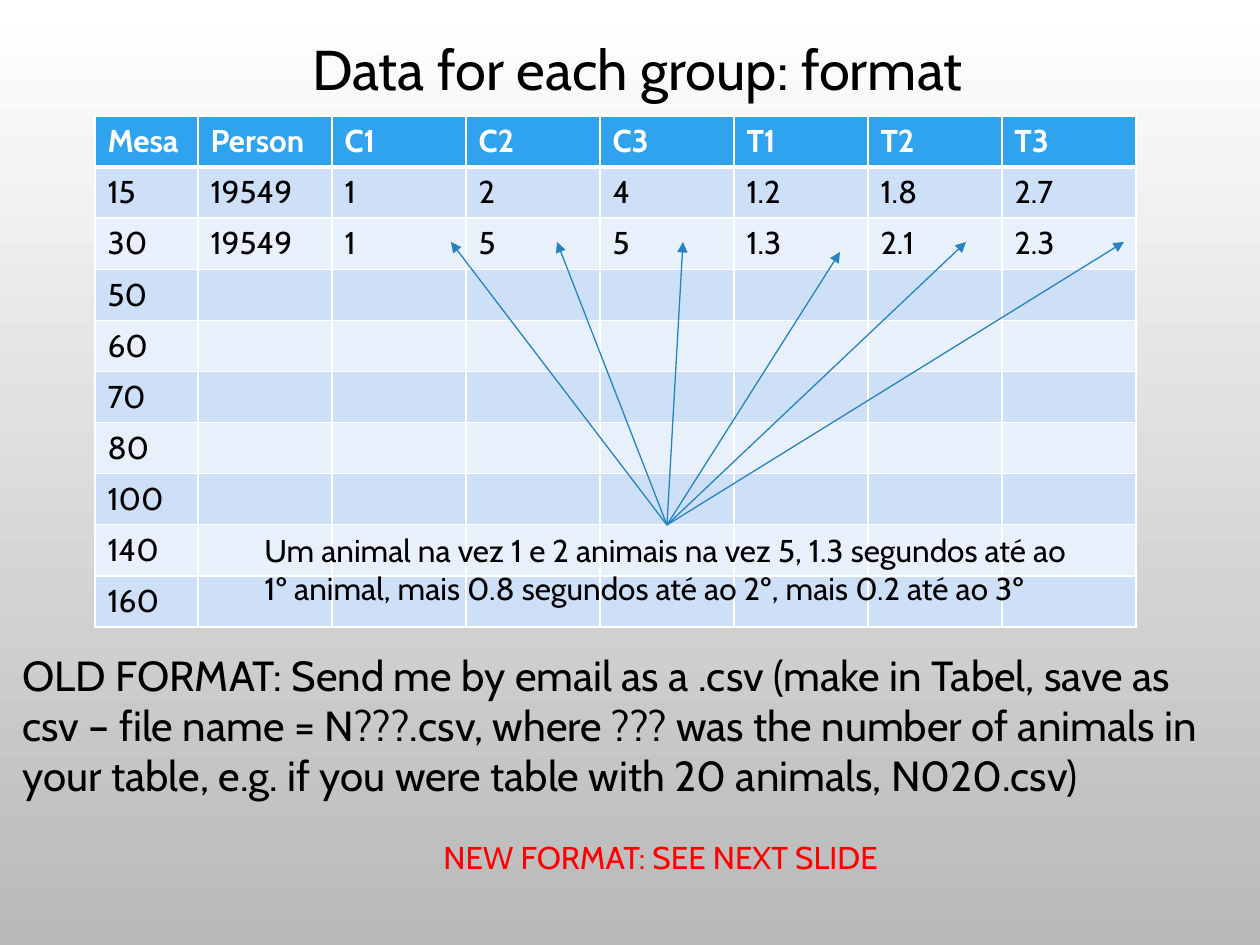
from lxml import etree
from pptx import Presentation
from pptx.dml.color import RGBColor
from pptx.enum.shapes import MSO_CONNECTOR
from pptx.oxml.ns import qn
from pptx.util import Emu, Pt

STRAIGHT = MSO_CONNECTOR.STRAIGHT
EMU_PER_INCH = 914400
PX_PER_INCH = 126
FONT = "Cabin"
BLACK, WHITE, RED = "000000", "FFFFFF", "FF0000"
HEADER_FILL, BAND_FILLS = "2FA3EE", ("CDE0F8", "E8F0FC")
ARROW_BLUE = "2683BF"

HEADERS = ["Mesa", "Person", "C1", "C2", "C3", "T1", "T2", "T3"]
SAMPLE_ROWS = [
    ["15", "19549", "1", "2", "4", "1.2", "1.8", "2.7"],
    ["30", "19549", "1", "5", "5", "1.3", "2.1", "2.3"],
]
EMPTY_MESAS = [50, 60, 70, 80, 100, 140, 160]
FIRST_COLUMN, COLUMN, ROW = 103, 134, 51
ARROW_START = (667, 525)
ARROW_ENDS = [(451, 242), (557, 242), (683, 242), (840, 252), (966, 242), (1124, 242)]


def px(value):
    return Emu(round(value * EMU_PER_INCH / PX_PER_INCH))


def color(value):
    return RGBColor.from_string(value)


def style_font(paragraph, size, font_color, bold=False):
    font = paragraph.font
    font.name = FONT
    font.size = Pt(size)
    font.bold = bold
    font.color.rgb = color(font_color)


def set_background(slide):
    fill = slide.background.fill
    fill.gradient()
    fill.gradient_angle = 270
    for stop, position, stop_color in zip(fill.gradient_stops, (0, 1), (WHITE, "B9B9B9")):
        stop.position = position
        stop.color.rgb = color(stop_color)


def add_text(slide, left, top, width, height, text, size, font_color=BLACK):
    shape = slide.shapes.add_textbox(px(left), px(top), px(width), px(height))
    shape.text_frame.word_wrap = True
    paragraph = shape.text_frame.paragraphs[0]
    paragraph.text = text
    style_font(paragraph, size, font_color)


def add_border(cell, side, width):
    properties = cell._tc.get_or_add_tcPr()
    line = etree.SubElement(properties, qn(f"a:ln{side}"), w=str(Pt(width)))
    fill = etree.SubElement(line, qn("a:solidFill"))
    etree.SubElement(fill, qn("a:srgbClr"), val=WHITE)


def fill_cell(cell, text, row_index):
    header = row_index == 0
    for side in "LRTB":
        thick = (header and side == "B") or (row_index == 1 and side == "T")
        add_border(cell, side, 3 if thick else 1)
    cell.fill.solid()
    cell.fill.fore_color.rgb = color(HEADER_FILL if header else BAND_FILLS[(row_index - 1) % 2])
    paragraph = cell.text_frame.paragraphs[0]
    paragraph.text = text
    style_font(paragraph, 18, WHITE if header else BLACK, header)


def add_data_table(slide, left, top):
    blanks = [""] * (len(HEADERS) - 1)
    rows = [HEADERS, *SAMPLE_ROWS, *([str(mesa), *blanks] for mesa in EMPTY_MESAS)]
    width = FIRST_COLUMN + COLUMN * len(blanks)
    frame = slide.shapes.add_table(
        len(rows), len(HEADERS), px(left), px(top), px(width), px(ROW * len(rows)))
    table = frame.table
    for index, column in enumerate(table.columns):
        column.width = px(COLUMN if index else FIRST_COLUMN)
    for row_index, values in enumerate(rows):
        table.rows[row_index].height = px(ROW)
        for column_index, value in enumerate(values):
            fill_cell(table.cell(row_index, column_index), value, row_index)


def add_arrow(slide, start, end):
    connector = slide.shapes.add_connector(STRAIGHT, *map(px, start + end))
    connector.line.color.rgb = color(ARROW_BLUE)
    connector.line.width = Pt(0.75)
    etree.SubElement(connector.line._get_or_add_ln(), qn("a:tailEnd"), type="triangle")
    etree.SubElement(connector._element.spPr, qn("a:effectLst"))


def main():
    presentation = Presentation()
    presentation.slide_width = px(1260)
    presentation.slide_height = px(945)
    slide = presentation.slides.add_slide(presentation.slide_layouts[6])
    set_background(slide)
    add_data_table(slide, 95, 116)
    add_text(slide, 300, 28, 766, 81, "Data for each group: format", 32)
    add_text(slide, 10, 643, 1239, 165,
             "OLD FORMAT: Send me by email as a .csv (make in Tabel, save as csv "
             "– file name = N???.csv, where ??? was the number of animals in your "
             "table, e.g. if you were table with 20 animals, N020.csv)", 24)
    for end in ARROW_ENDS:
        add_arrow(slide, ARROW_START, end)
    add_text(slide, 252, 525, 829, 89,
             "Um animal na vez 1 e 2 animais na vez 5, 1.3 segundos até ao "
             "1º animal, mais 0.8 segundos até ao 2º, mais 0.2 até ao 3º", 18)
    add_text(slide, 431, 832, 693, 50, "NEW FORMAT: SEE NEXT SLIDE", 18, RED)
    presentation.save("out.pptx")


if __name__ == "__main__":
    main()
